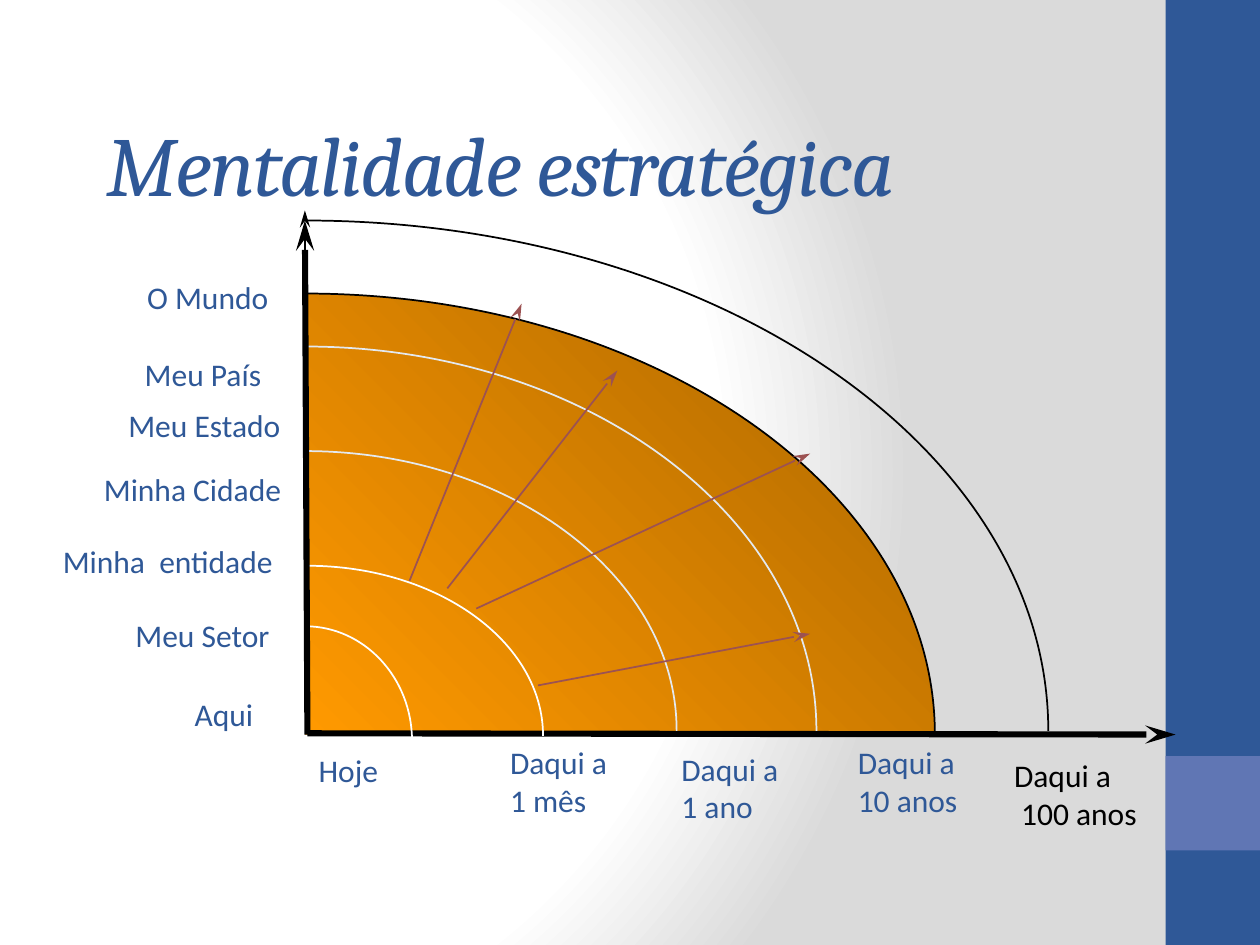
from lxml import etree
from pptx import Presentation
from pptx.dml.color import RGBColor
from pptx.enum import shapes, text
from pptx.oxml import parse_xml
from pptx.oxml.ns import qn
from pptx.util import Inches, Pt

BLUE, LILAC, BLACK, WHITE, PALE, WINE = (
    "2F5897", "6076B4", "000000", "FFFFFF", "E4E9EF", "9C5252")
DRAWING = 'xmlns:a="http://schemas.openxmlformats.org/drawingml/2006/main"'

BACKDROP = f"""<a:gradFill {DRAWING} rotWithShape="1">
<a:gsLst><a:gs pos="0"><a:srgbClr val="FFFFFF"/></a:gs><a:gs pos="75000"><a:srgbClr val="FFFFFF"/></a:gs>
<a:gs pos="100000"><a:srgbClr val="DADADA"/></a:gs></a:gsLst>
<a:path path="circle"><a:fillToRect l="20000" t="50000" r="100000" b="50000"/></a:path></a:gradFill>"""

CURVE = """<a:moveTo><a:pt x="0" y="0"/></a:moveTo><a:cubicBezTo><a:pt x="552" y="0"/>
<a:pt x="1000" y="448"/><a:pt x="1000" y="1000"/></a:cubicBezTo>"""
QUARTER = f"""<a:pathLst {DRAWING}><a:path w="1000" h="1000" fill="none">{CURVE}</a:path>
<a:path w="1000" h="1000" stroke="0">{CURVE}<a:lnTo><a:pt x="0" y="1000"/></a:lnTo><a:close/></a:path>
</a:pathLst>"""


def rgb(value):
    """Turn a hex string into a colour."""
    return RGBColor.from_string(value)


def paint_backdrop(slide):
    """Give the slide its radial white-to-grey background."""
    slide.background.fill.solid()
    properties = slide.background._cSld.bg.bgPr
    solid = properties.find(qn("a:solidFill"))
    properties.replace(solid, parse_xml(BACKDROP))


def add_band(slide, left, top, width, height, color):
    """Add one plain rectangle."""
    band = slide.shapes.add_shape(
        shapes.MSO_SHAPE.RECTANGLE, *map(Inches, (left, top, width, height)))
    band.shadow.inherit = False
    band.fill.solid()
    band.fill.fore_color.rgb = rgb(color)
    band.line.fill.background()


def add_side_band(slide, left, top, width, height):
    """Fill the right edge with a band and its lighter square."""
    add_band(slide, left, top, width, height, BLUE)
    add_band(slide, left, top + 0.8 * height, width, width, LILAC)


def add_title(slide, left, top, width, height):
    """Write the heading in large italics."""
    heading = slide.shapes.add_textbox(*map(Inches, (left, top, width, height)))
    frame = heading.text_frame
    frame.word_wrap = True
    frame.vertical_anchor = text.MSO_ANCHOR.MIDDLE
    frame.text = "Mentalidade estratégica"
    run = frame.paragraphs[0].runs[0]
    run.font.name, run.font.size, run.font.italic = "Cambria", Pt(48), True
    run.font.color.rgb = rgb(BLUE)
    run._r.get_or_add_rPr().set("spc", "-100")


def add_label(slide, left, top, width, wording, color=BLUE, wrap=False):
    """Write one axis label, as tall as its lines."""
    height = 0.1 + 0.3 * len(wording.split("\n"))
    label = slide.shapes.add_textbox(*map(Inches, (left, top, width, height)))
    frame = label.text_frame
    frame.word_wrap = wrap
    frame.auto_size = text.MSO_AUTO_SIZE.SHAPE_TO_FIT_TEXT
    frame.text = wording
    for paragraph in frame.paragraphs:
        for run in paragraph.runs:
            run.font.name, run.font.size = "Calibri", Pt(18)
            run.font.color.rgb = rgb(color)


def add_arrow(slide, start, end, color, weight):
    """Draw a line with a long stealth arrowhead at its end."""
    arrow = slide.shapes.add_connector(
        shapes.MSO_CONNECTOR.STRAIGHT, *map(Inches, (*start, *end)))
    arrow.line.color.rgb = rgb(color)
    arrow.line.width = Pt(weight)
    etree.SubElement(arrow.line._get_or_add_ln(), qn("a:tailEnd"),
                     type="stealth", w="med", len="lg")
    etree.SubElement(arrow._element.spPr, qn("a:effectLst"))


def add_quarter(slide, left, base, width, height, color):
    """Draw a quarter ellipse around the corner at left and base."""
    builder = slide.shapes.build_freeform(Inches(left), Inches(base - height))
    builder.add_line_segments([(Inches(left + width), Inches(base))], close=False)
    quarter = builder.convert_to_shape()
    geometry = quarter._element.spPr.find(qn("a:custGeom"))
    geometry.replace(geometry.find(qn("a:pathLst")), parse_xml(QUARTER))
    quarter.shadow.inherit = False
    quarter.fill.background()
    quarter.line.color.rgb = rgb(color)
    quarter.line.width = Pt(1)
    return quarter


def add_horizons(slide, left, base):
    """Draw the nested horizons, outward arrows and both axes."""
    world = add_quarter(slide, left, base, 5, 3.5, BLACK)
    world.fill.gradient()
    world.fill.gradient_angle = 45
    for stop, position, shade in zip(
            world.fill.gradient_stops, (0, 1), ("FF9900", "AA6600")):
        stop.position = position
        stop.color.rgb = rgb(shade)
    add_arrow(slide, (left + 0.02, base - 0.08), (left, base - 4.16), BLACK, 1)
    add_arrow(slide, (left + 0.02, base - 0.01), (left + 6.91, base), BLACK, 3.5)
    for dx, dy, width, height, color in (
            (0, 0.05, 0.85, 0.91, WHITE), (0.02, 0.01, 1.87, 1.35, WHITE),
            (0, -0.03, 2.95, 2.22, PALE), (0, -0.03, 4.06, 3.05, PALE),
            (0, -0.03, 5.9, 4.05, BLACK)):
        add_quarter(slide, left + dx, base + dy, width, height, color)
    for x1, y1, x2, y2 in (
            (0.83, 1.22, 1.72, 3.42), (1.13, 1.16, 2.48, 2.89),
            (1.36, 1, 4.01, 2.23), (1.85, 0.39, 4.01, 0.8)):
        add_arrow(slide, (left + x1, base - y1), (left + x2, base - y2), WINE, 1)
    add_arrow(slide, (left + 0.02, base), (left, base - 4.08), BLACK, 3.5)


def add_places(slide, left, top):
    """Label the vertical axis, from the world down to here."""
    for dx, dy, width, place in (
            (0.67, 0, 1.24, "O Mundo"), (0.65, 0.61, 1.19, "Meu País"),
            (0.52, 1.01, 1.49, "Meu Estado"), (0.27, 1.52, 1.8, " Minha Cidade"),
            (0, 2.09, 1.95, "Minha  entidade"), (0.52, 2.68, 1.38, " Meu Setor"),
            (0.99, 3.31, 0.79, " Aqui")):
        add_label(slide, left + dx, top + dy, width, place)


def add_times(slide, left, top):
    """Label the horizontal axis, from today to a century ahead."""
    for dx, dy, width, time in (
            (0, 0.06, 0.72, "Hoje"), (1.52, 0, 1.04, "Daqui a\n1 mês"),
            (2.88, 0.05, 1.04, "Daqui a\n1 ano"), (4.28, 0, 1.04, "Daqui a\n10 anos")):
        add_label(slide, left + dx, top + dy, width, time)
    add_label(slide, left + 5.52, top + 0.1, 1.47, "Daqui a\n 100 anos", BLACK, True)


def main():
    """Build the slide and save it."""
    deck = Presentation()
    deck.slide_width, deck.slide_height = Inches(10), Inches(7.5)
    slide = deck.slides.add_slide(deck.slide_layouts[6])
    paint_backdrop(slide)
    add_side_band(slide, 9.25, 0, 0.75, 7.5)
    add_horizons(slide, 2.42, 5.83)
    add_places(slide, 0.4, 2.16)
    add_times(slide, 2.43, 5.85)
    add_title(slide, 0.75, 0.67, 8.5, 1.25)
    deck.save("out.pptx")


if __name__ == "__main__":
    main()
